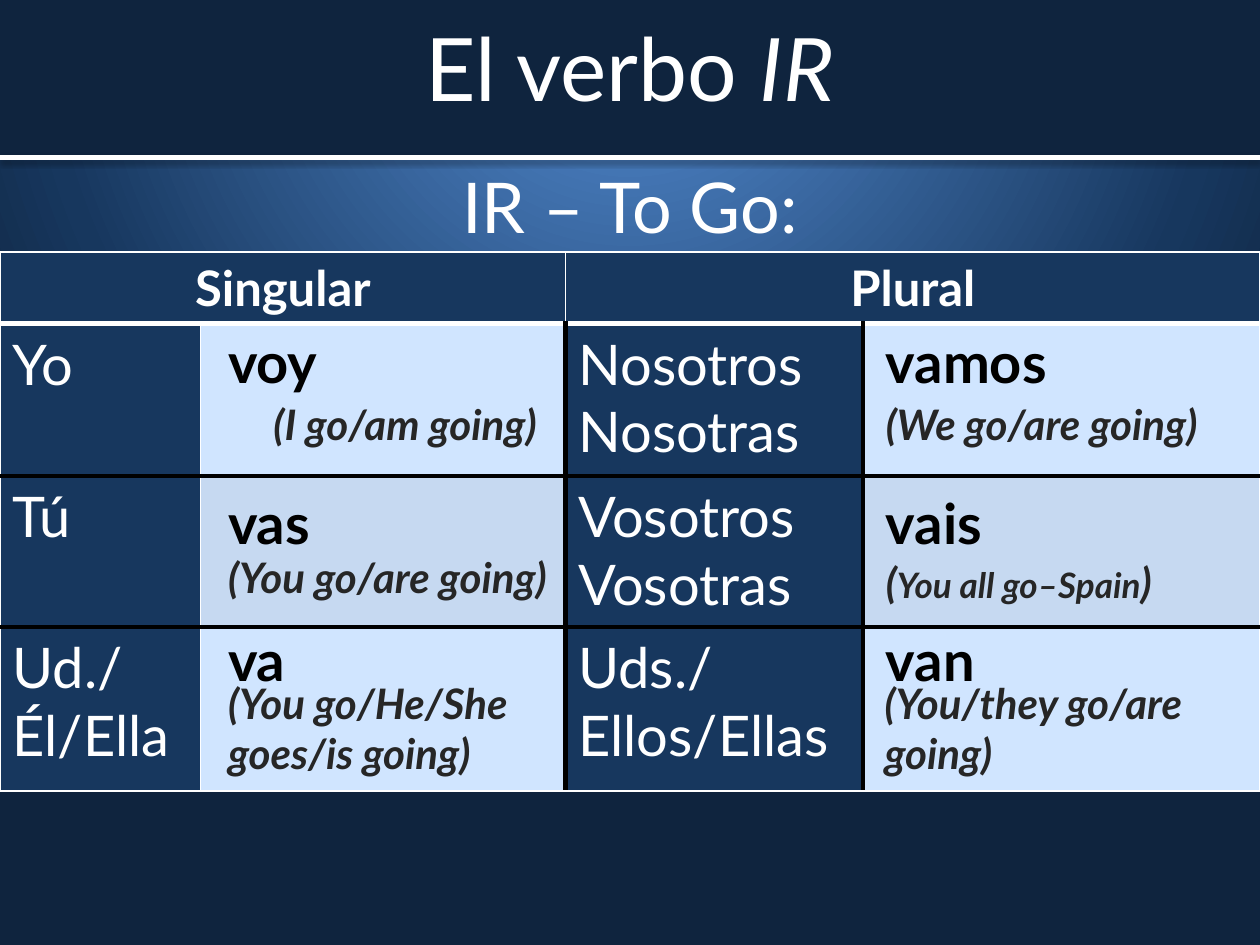
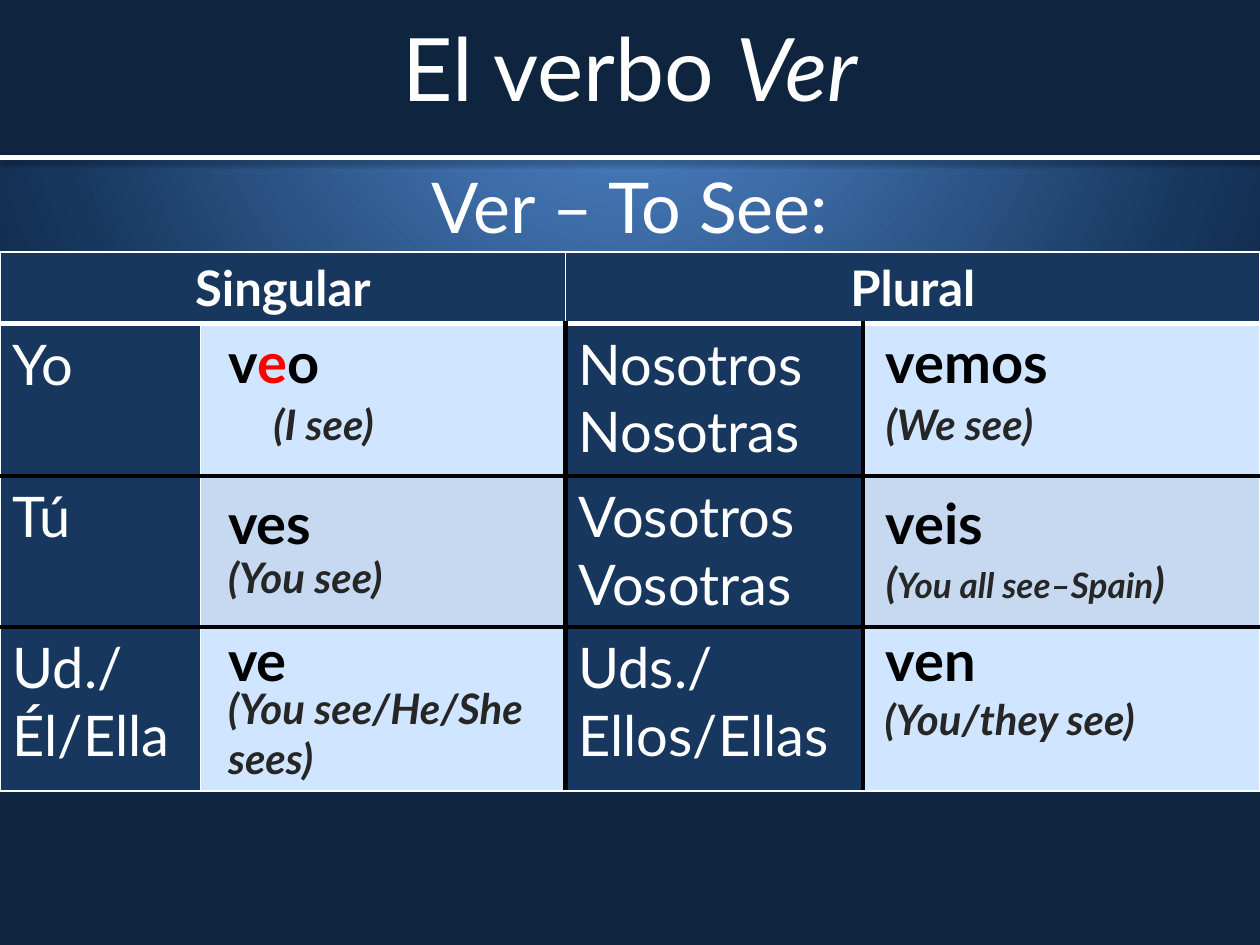
from lxml import etree
from pptx import Presentation, util as u
from pptx.dml.color import RGBColor
from pptx.enum import shapes, text
from pptx.oxml import parse_xml
from pptx.oxml.ns import nsdecls, qn

HUE = {"deep": "0F243E", "navy": "17375E", "glow": "558ED5", "pale": "D0E5FF",
       "mist": "C6D9F1", "white": "FFFFFF", "black": "000000", "gray": "262626", "red": "FF0000"}
BASE = {"name": "Lato", "bold": False, "italic": False, "hue": "white"}
HEAD = BASE | {"size": u.Pt(28), "bold": True}
WHO = BASE | {"size": u.Pt(32)}
FORM = WHO | {"bold": True, "hue": "black"}
GLOSS = BASE | {"size": u.Pt(24), "bold": True, "italic": True, "hue": "gray"}
PLAIN = "{2D5ABB26-0587-4C30-8999-92F81FD0307C}"  # table style with no fill or grid

deck = Presentation()
deck.slide_width, deck.slide_height = u.Inches(10), u.Inches(7.5)
UNIT = deck.slide_width / 100  # the slide is a grid of 100 columns by 75 rows


def write(frame, lines, form, align=None):
    """Each line is a list of (text, changes to the format)."""
    for i, line in enumerate(lines):
        para = frame.paragraphs[0] if i == 0 else frame.add_paragraph()
        para.alignment = align
        for words, change in line:
            run = para.add_run()
            run.text = words
            for key, val in (form | change).items():
                if key == "hue":
                    run.font.color.rgb = RGBColor.from_string(HUE[val])
                else:
                    setattr(run.font, key, val)


def grid(slide, left, top, cols, rows):
    """Add an unstyled table, sized in grid units."""
    area = [round(n * UNIT) for n in (left, top, sum(cols), sum(rows))]
    table = slide.shapes.add_table(len(rows), len(cols), *area).table
    table.first_row = table.horz_banding = False
    table._tbl.tblPr.find(qn("a:tableStyleId")).text = PLAIN
    for col, wide in zip(table.columns, cols):
        col.width = round(wide * UNIT)
    for row, high in zip(table.rows, rows):
        row.height = round(high * UNIT)
    return table


# Shared backdrop: a glow from above the slide
master = deck.slide_master
master.background.fill.gradient()
old = master.element.xpath("p:cSld/p:bg/p:bgPr/a:gradFill")[0]
stops = "".join(f'<a:gs pos="{pos}000"><a:srgbClr val="{HUE[hue]}"/></a:gs>'
                for pos, hue in ((0, "glow"), (75, "navy"), (100, "deep")))
old.getparent().replace(old, parse_xml(
    f'<a:gradFill {nsdecls("a")} rotWithShape="1"><a:gsLst>{stops}</a:gsLst><a:path path="circle">'
    '<a:fillToRect l="50000" t="-80000" r="50000" b="180000"/></a:path></a:gradFill>'))

# Shared table: sizes, pronouns and rules
COLS = (15.9, 29, 23.6, 31.5)
ROWS = (5.6, 12.1, 12, 13)
WHOS = [(["Yo"], ["Nosotros", "Nosotras"]),
        (["Tú"], ["Vosotros", "Vosotras"]),
        (["Ud./Él/Ella"], ["Uds./Ellos/Ellas"])]
THIN, WIDE, DARK = ("white", 1), ("white", 3), ("black", 3)
ACROSS = (THIN, WIDE, DARK, DARK, THIN)
DOWN = (THIN, THIN, DARK, DARK, THIN)

# Places of the verb forms and their glosses: left, top, width, height
FORMS = [(17.1, 25.5, 24.6, 6.3), (17.1, 38.3, 23.4, 6.3), (17.1, 49.2, 12.3, 6.7),
         (69.3, 25.5, 28.2, 6.8), (69.3, 38.3, 25.2, 6.3), (69.3, 49.2, 24, 6.3)]
NOTES = [(20.7, 31.2, 26.4, 5), (17.1, 43.3, 28.3, 5), (17.1, 53.3, 26.4, 9),
         (69.3, 31.2, 30.7, 5), (69.3, 43.7, 29.2, 5), (69.2, 53.3, 29.2, 9)]

small = {"size": u.Pt(20)}
VERBS = [
    {"verb": "IR", "lead": "IR – To Go:",
     "forms": ["voy", "vas", "va", "vamos", "vais", "van"],
     "notes": ["(I go/am going)", "(You go/are going)", "(You go/He/She goes/is going)",
               "(We go/are going)", [("(", {}), ("You all go–Spain", small), (")", {})],
               "(You/they go/are going)"],
     "moved": {}},
    {"verb": "Ver", "lead": "Ver – To See:",
     "forms": [[("v", {}), ("e", {"hue": "red"}), ("o", {})],
               "ves", "ve", "vemos", "veis", "ven"],
     "notes": ["(I see)", "(You see)", "(You see/He/She sees)",
               "(We see)", [("(", {}), ("You all see–Spain", small), (")", {})],
               "(You/they see)"],
     "moved": {2: (17.1, 53.7, 26.4, 9), 5: (69.2, 54.6, 29.2, 5)}},
]

for verb in VERBS:
    slide = deck.slides.add_slide(deck.slide_layouts[0])
    title, lead = slide.placeholders

    # Band and rule behind the title
    edge = round(12.5 * UNIT)
    band = slide.shapes.add_shape(shapes.MSO_SHAPE.RECTANGLE, 0, 0, deck.slide_width, edge)
    band.shadow.inherit = False
    band.fill.solid()
    band.fill.fore_color.rgb = RGBColor.from_string(HUE["deep"])
    band.line.fill.background()
    rule = slide.shapes.add_connector(shapes.MSO_CONNECTOR.STRAIGHT, 0, edge, deck.slide_width, edge)
    rule.line.color.rgb = RGBColor.from_string(HUE["white"])
    rule.line.width = u.Pt(3)
    rule._element.spPr.append(parse_xml(
        f'<a:effectLst {nsdecls("a")}><a:outerShdw blurRad="{u.Pt(3.1)}" dist="{u.Pt(1.6)}" '
        'dir="5400000" rotWithShape="0"><a:srgbClr val="000000"><a:alpha val="38000"/>'
        '</a:srgbClr></a:outerShdw></a:effectLst>'))
    slide.shapes._spTree.append(title._element)

    # Title and lead line
    for hold, top, high, size, line in (
            (title, 0, 10.6, 50, [("El verbo ", {}), (verb["verb"], {"italic": True})]),
            (lead, 12.5, 52, 40, [(verb["lead"], {})])):
        hold.left, hold.top = 0, round(top * UNIT)
        hold.width, hold.height = deck.slide_width, round(high * UNIT)
        write(hold.text_frame, [line], BASE | {"size": u.Pt(size)}, text.PP_ALIGN.CENTER)
    title.text_frame.vertical_anchor = text.MSO_ANCHOR.MIDDLE

    # Pronoun table: borders and fills
    table = grid(slide, 0, 20, COLS, ROWS)
    for r in range(len(ROWS)):
        for c in range(len(COLS)):
            cell = table.cell(r, c)
            sides = {"L": DOWN[c] if r else THIN, "R": DOWN[c + 1] if r else THIN,
                     "T": ACROSS[r], "B": ACROSS[r + 1]}
            prop = cell._tc.get_or_add_tcPr()
            for side, (hue, wide) in sides.items():
                line = etree.SubElement(prop, qn(f"a:ln{side}"), w=str(u.Pt(wide)))
                fill = etree.SubElement(line, qn("a:solidFill"))
                etree.SubElement(fill, qn("a:srgbClr"), val=HUE[hue])
            shade = "navy" if r == 0 or c % 2 == 0 else "mist" if r == 2 else "pale"
            cell.fill.solid()
            cell.fill.fore_color.rgb = RGBColor.from_string(HUE[shade])

    # Pronoun table: words
    for c, name in ((0, "Singular"), (2, "Plural")):
        table.cell(0, c).merge(table.cell(0, c + 1))
        write(table.cell(0, c).text_frame, [[(name, {})]], HEAD, text.PP_ALIGN.CENTER)
    for r, pair in enumerate(WHOS, 1):
        for c, names in zip((0, 2), pair):
            write(table.cell(r, c).text_frame, [[(name, {})] for name in names], WHO)

    # Verb forms, then their glosses
    spots = [verb["moved"].get(i, spot) for i, spot in enumerate(NOTES)]
    for places, items, form in ((FORMS, verb["forms"], FORM), (spots, verb["notes"], GLOSS)):
        for (left, top, wide, high), item in zip(places, items):
            line = [(item, {})] if isinstance(item, str) else item
            write(grid(slide, left, top, [wide], [high]).cell(0, 0).text_frame, [line], form)

deck.save("out.pptx")
